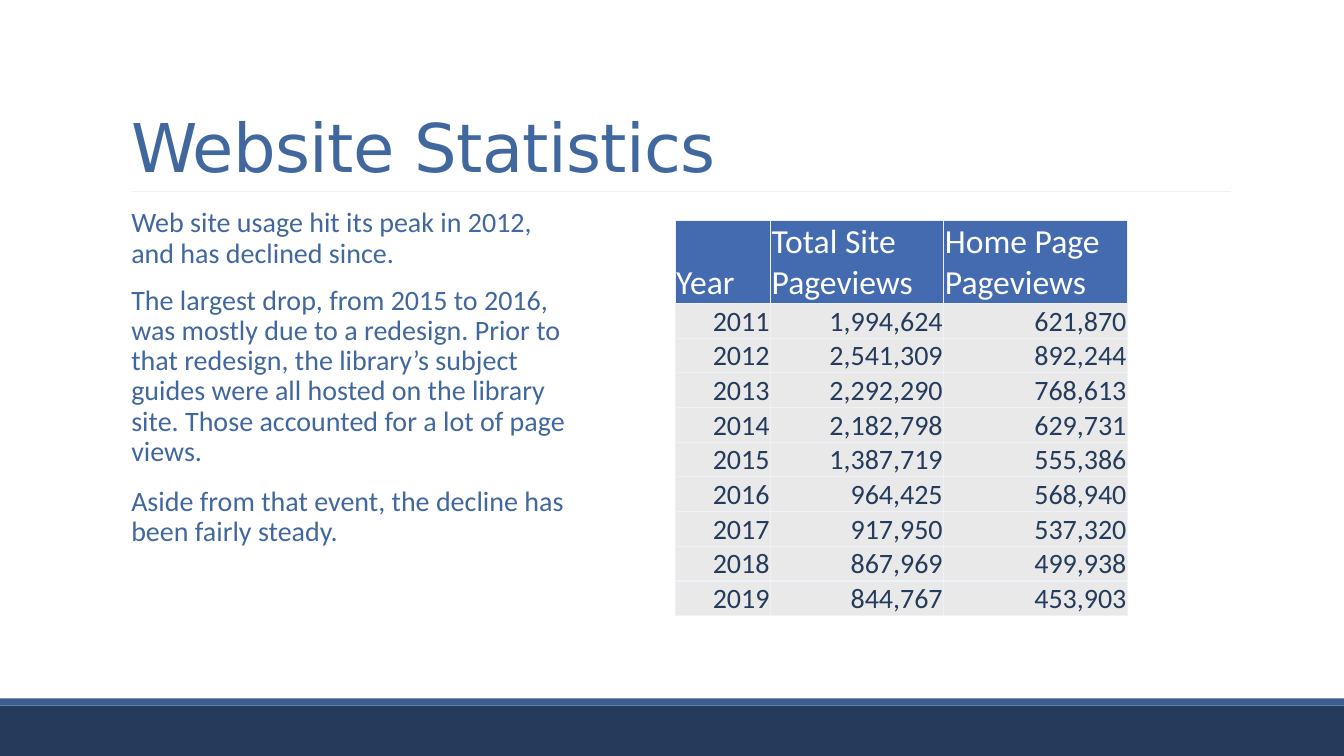
from lxml import etree
from pptx import Presentation
from pptx.dml.color import RGBColor
from pptx.enum.shapes import MSO_CONNECTOR, MSO_SHAPE
from pptx.enum.text import MSO_ANCHOR, PP_ALIGN
from pptx.oxml.ns import qn
from pptx.util import Pt

PX = 9525
NAVY = RGBColor(0x25, 0x3B, 0x5B)
STRIP = RGBColor(0x3B, 0x5D, 0x91)
BLUE = RGBColor(0x41, 0x67, 0x9F)
HEADER = RGBColor(0x44, 0x6B, 0xAF)
PALE = RGBColor(0xED, 0xF1, 0xF8)
GREY = RGBColor(0xE9, 0xE9, 0xEA)
WHITE = RGBColor(0xFF, 0xFF, 0xFF)
RECTANGLE = MSO_SHAPE.RECTANGLE
STRAIGHT = MSO_CONNECTOR.STRAIGHT
TOP, BOTTOM = MSO_ANCHOR.TOP, MSO_ANCHOR.BOTTOM
LEFT, RIGHT = PP_ALIGN.LEFT, PP_ALIGN.RIGHT

PARAGRAPHS = [
    "Web site usage hit its peak in 2012, and has declined since.",
    "The largest drop, from 2015 to 2016, was mostly due to a redesign. "
    "Prior to that redesign, the library’s subject guides were all hosted "
    "on the library site. Those accounted for a lot of page views.",
    "Aside from that event, the decline has been fairly steady.",
]
PAGEVIEWS = [
    ("Year", "Total Site Pageviews", "Home Page Pageviews"),
    ("2011", "1,994,624", "621,870"),
    ("2012", "2,541,309", "892,244"),
    ("2013", "2,292,290", "768,613"),
    ("2014", "2,182,798", "629,731"),
    ("2015", "1,387,719", "555,386"),
    ("2016", "964,425", "568,940"),
    ("2017", "917,950", "537,320"),
    ("2018", "867,969", "499,938"),
    ("2019", "844,767", "453,903"),
]
COLUMN_WIDTHS = [91, 165, 175]
HEADER_HEIGHT, ROW_HEIGHT = 79, 33


def px(*lengths):
    return [n * PX for n in lengths]


def add_band(s, box, color):
    sp = s.shapes.add_shape(RECTANGLE, *px(*box))
    sp.shadow.inherit = False
    sp.fill.solid()
    sp.fill.fore_color.rgb = color
    sp.line.fill.background()


def add_rule(s, ends):
    line = s.shapes.add_connector(STRAIGHT, *px(*ends))
    line.line.color.rgb = PALE
    line.line.width = Pt(0.5)
    etree.SubElement(line._element.spPr, qn("a:effectLst"))


def style_paragraph(p, font, size, color):
    for r in p.runs:
        r.font.name = font
        r.font.size = Pt(size)
        r.font.color.rgb = color


def add_text(s, box, paragraphs, font, size, spacing, anchor):
    tf = s.shapes.add_textbox(*px(*box)).text_frame
    tf.word_wrap = True
    tf.vertical_anchor = anchor
    tf.margin_left, tf.margin_right = px(10, 0)
    for i, text in enumerate(paragraphs):
        p = tf.add_paragraph() if i else tf.paragraphs[0]
        p.text = text
        p.line_spacing = spacing
        if i:
            p.space_before = Pt(12)
            p.space_after = Pt(2)
        style_paragraph(p, font, size, BLUE)
    return tf


def add_borders(cell):
    tc_pr = cell._tc.get_or_add_tcPr()
    for i, side in enumerate(("lnL", "lnR", "lnT", "lnB")):
        ln = etree.Element(qn("a:" + side), w=str(Pt(1)))
        fill = etree.SubElement(ln, qn("a:solidFill"))
        etree.SubElement(fill, qn("a:srgbClr"), val=str(PALE))
        tc_pr.insert(i, ln)


def style_cell(cell, text, is_header):
    cell.text = text
    cell.vertical_anchor = BOTTOM
    cell.margin_left, cell.margin_right, cell.margin_top, cell.margin_bottom = px(1, 1, 1, 0)
    cell.fill.solid()
    cell.fill.fore_color.rgb = HEADER if is_header else GREY
    p = cell.text_frame.paragraphs[0]
    p.alignment = LEFT if is_header else RIGHT
    style_paragraph(p, "Calibri", 24 if is_header else 20, WHITE if is_header else NAVY)
    add_borders(cell)


def add_pageviews_table(s, left, top):
    body_rows = len(PAGEVIEWS) - 1
    width, height = sum(COLUMN_WIDTHS), HEADER_HEIGHT + body_rows * ROW_HEIGHT
    table = s.shapes.add_table(
        len(PAGEVIEWS), len(COLUMN_WIDTHS), *px(left, top, width, height)).table
    table.horz_banding = False
    for column, column_width in zip(table.columns, COLUMN_WIDTHS):
        column.width = column_width * PX
    for i, values in enumerate(PAGEVIEWS):
        table.rows[i].height = (ROW_HEIGHT if i else HEADER_HEIGHT) * PX
        for j, value in enumerate(values):
            style_cell(table.cell(i, j), value, i == 0)


def main():
    prs = Presentation()
    prs.slide_width, prs.slide_height = px(1280, 720)
    s = prs.slides.add_slide(prs.slide_layouts[6])
    add_band(s, (0, 672, 1280, 48), NAVY)
    add_band(s, (0, 665, 1280, 7), STRIP)
    add_rule(s, (126, 182, 1172, 182))
    title = add_text(s, (115, 30, 1056, 152), ["Website Statistics"],
                     "DejaVu Sans", 48, 0.85, BOTTOM)
    title.paragraphs[0].runs[0].font._element.set("spc", "-50")
    add_text(s, (115, 194, 426, 422), PARAGRAPHS, "Calibri", 20, 0.9, TOP)
    add_pageviews_table(s, 643, 210)
    prs.save("out.pptx")


if __name__ == "__main__":
    main()
